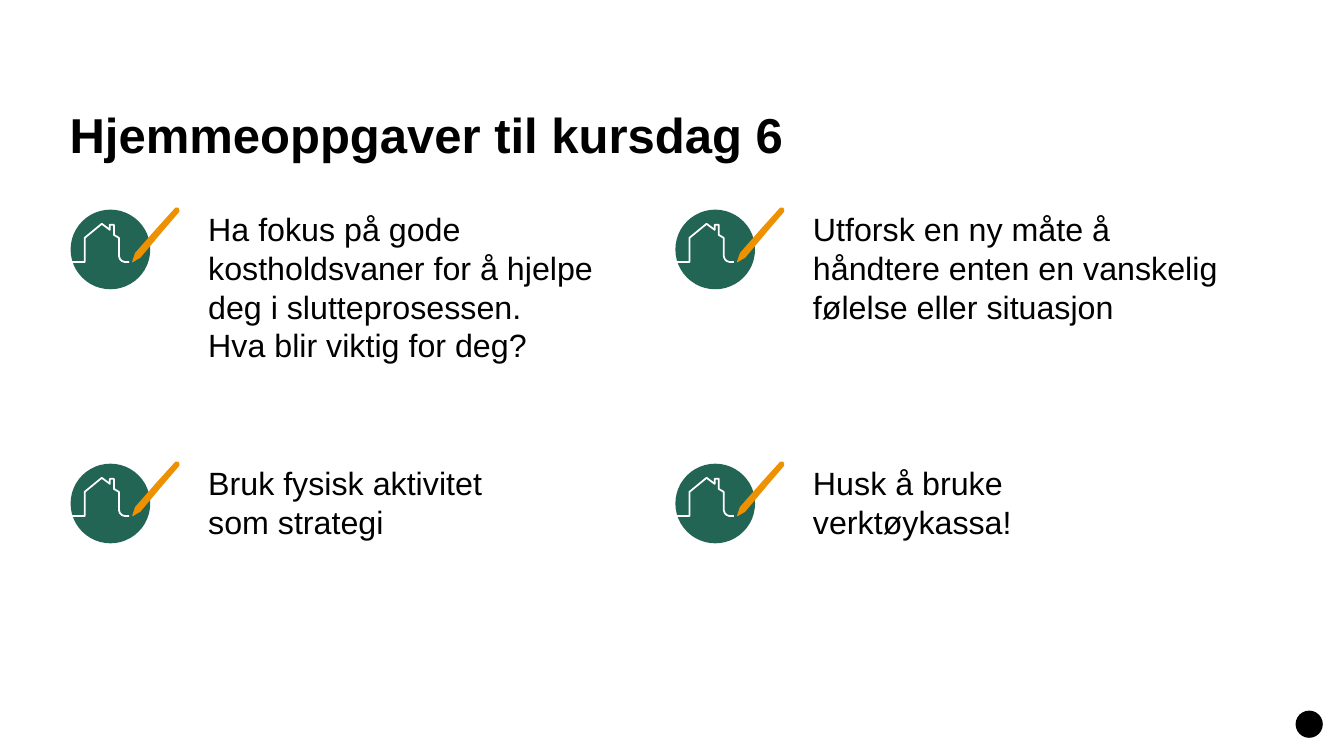
import pptx
import pptx.dml.color
import pptx.enum.shapes
import pptx.enum.text
import pptx.util
from dataclasses import dataclass

TITLE = "Hjemmeoppgaver til kursdag 6"
# column, row, text width in inches, text height in lines, wording
TASKS = [
    (0, 0, 3.87, 4, "Ha fokus på gode kostholdsvaner for å hjelpe deg i slutteprosessen.\v"
                    "Hva blir viktig for deg?"),
    (1, 0, 4.27, 3, "Utforsk en ny måte å håndtere enten en vanskelig følelse eller situasjon"),
    (0, 1, 3.17, 2, "Bruk fysisk aktivitet som strategi"),
    (1, 1, 3.75, 2, "Husk å bruke verktøykassa!"),
]

# Icon outlines in hundredths of an inch from the disc's top left corner
HOUSE = [(-2, 52), (14, 52), (14, 28), (31, 14), (39, 20), (39, 15), (43, 15), (43, 25),
         (48, 28), (48, 46), (49, 49), (51, 51), (54, 52), (58, 52)]
PEN_SHAFT = [(90, 23), (108, 2), (108, 0), (107, -2), (106, -2), (104, -2), (85, 19), (88, 21)]
PEN_TIP = [(63, 46), (61, 52), (62, 52), (67, 49), (69, 48), (90, 23), (88, 21), (85, 19),
           (64, 43)]


@dataclass(frozen=True)
class Theme:
    font: str = "Arial"
    title_size: float = 35
    body_size: float = 23
    house_line: float = 1.25
    black: str = "000000"
    white: str = "FFFFFF"
    green: str = "226555"
    orange: str = "EE9100"


THEME = Theme()
WIDTH, HEIGHT = 13.33, 7.5
LEFT, TOP = 0.7, 2.08
COLUMN, ROW = 0.45 * WIDTH, 0.336 * HEIGHT
DISC = 0.79
TEXT_INDENT = 1.365
LINE_HEIGHT = 0.387
inch = pptx.util.Inches


def rgb(value):
    return pptx.dml.color.RGBColor.from_string(value)


def add_text(s, text, box, size, bold=False):
    tf = s.shapes.add_textbox(*map(inch, box)).text_frame
    tf.word_wrap = True
    tf.margin_left = tf.margin_top = tf.margin_right = tf.margin_bottom = 0
    p = tf.paragraphs[0]
    p.text = text
    for r in p.runs:
        r.font.name = THEME.font
        r.font.size = pptx.util.Pt(size)
        r.font.bold = bold
        r.font.color.rgb = rgb(THEME.black)
    return tf


def fill_plain(sp, color):
    sp.shadow.inherit = False
    sp.fill.solid()
    sp.fill.fore_color.rgb = rgb(color)
    sp.line.fill.background()


def add_disc(shapes, x, y, size, color):
    sp = shapes.add_shape(pptx.enum.shapes.MSO_SHAPE.OVAL, *map(inch, (x, y, size, size)))
    fill_plain(sp, color)


def add_outline(shapes, points, x, y, close):
    builder = shapes.build_freeform(*points[0], scale=inch(0.01))
    builder.add_line_segments(points[1:], close=close)
    return builder.convert_to_shape(inch(x), inch(y))


def add_icon(s, x, y):
    """Draw a house on a disc, its line ending at a pen."""
    shapes = s.shapes.add_group_shape().shapes
    add_disc(shapes, x, y, DISC, THEME.green)
    house = add_outline(shapes, HOUSE, x, y, close=False)
    house.shadow.inherit = False
    house.fill.background()
    house.line.color.rgb = rgb(THEME.white)
    house.line.width = pptx.util.Pt(THEME.house_line)
    for part in (PEN_SHAFT, PEN_TIP):
        fill_plain(add_outline(shapes, part, x, y, close=True), THEME.orange)


def main():
    prs = pptx.Presentation()
    prs.slide_width, prs.slide_height = inch(WIDTH), inch(HEIGHT)
    s = prs.slides.add_slide(prs.slide_layouts[6])

    add_disc(s.shapes, 12.85, 7.05, 0.27, THEME.black)
    tf = add_text(s, TITLE, (0.69, 0.35, 11.96, 1.27), THEME.title_size, bold=True)
    tf.vertical_anchor = pptx.enum.text.MSO_ANCHOR.BOTTOM
    tf.paragraphs[0].line_spacing = 0.85

    for column, row, width, lines, text in TASKS:
        x, y = LEFT + column * COLUMN, TOP + row * ROW
        add_icon(s, x, y)
        add_text(s, text, (x + TEXT_INDENT, y, width, lines * LINE_HEIGHT), THEME.body_size)

    prs.save("out.pptx")


if __name__ == "__main__":
    main()
